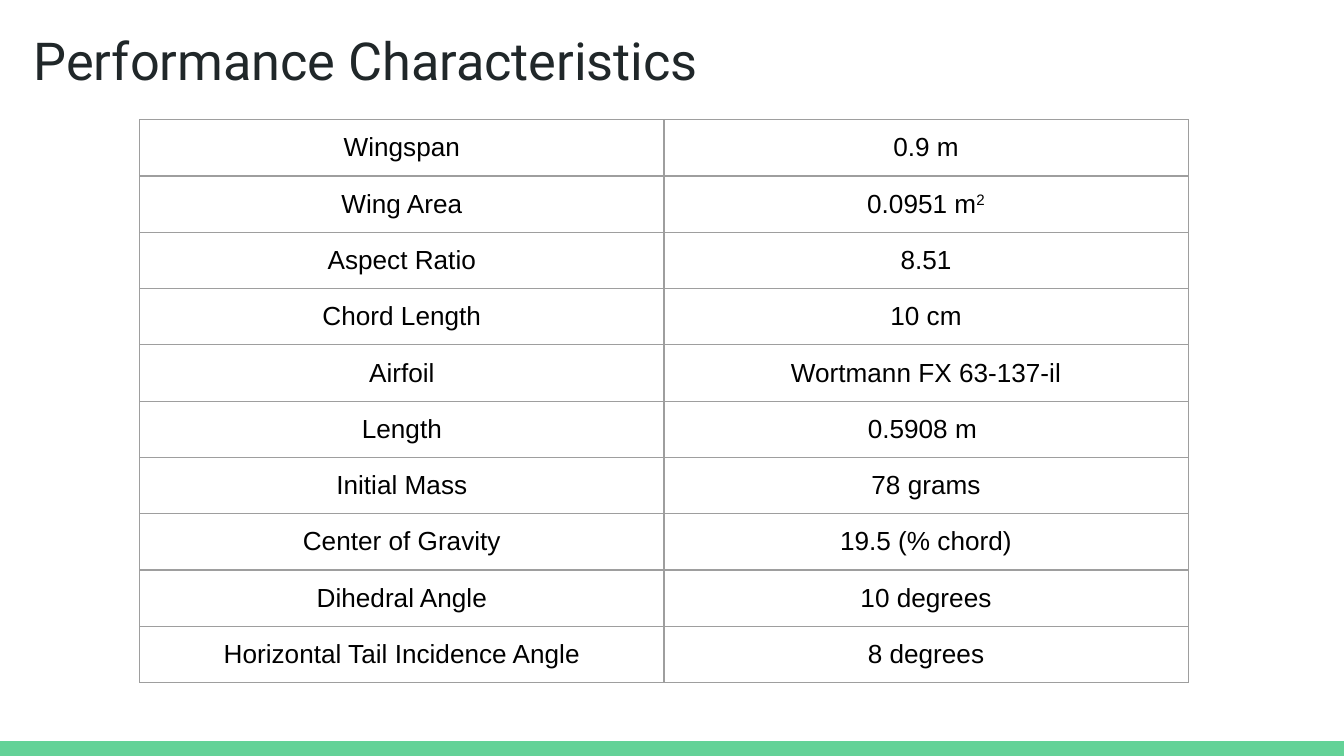
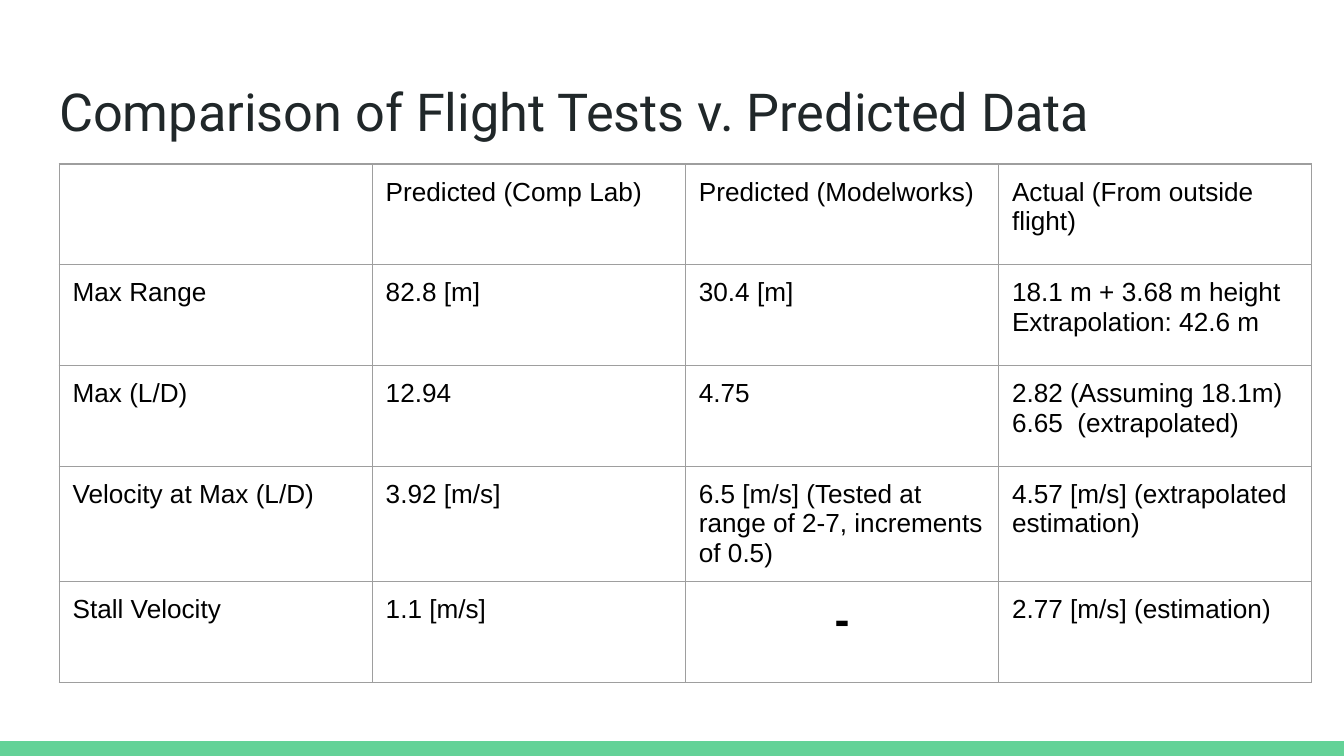
from pptx import Presentation
from pptx.dml.color import RGBColor
from pptx.enum.shapes import MSO_SHAPE
from pptx.enum.text import MSO_ANCHOR, MSO_AUTO_SIZE, PP_ALIGN
from pptx.oxml import parse_xml
from pptx.oxml.ns import nsdecls
from pptx.util import Inches, Pt

GREEN, INK, BLACK, GREY = "63D297", "202729", "000000", "9E9E9E"
INSET = Inches(0.1)


def color(value):
    return RGBColor.from_string(value)


def add_run(p, text, font, size, ink, bold=False):
    r = p.add_run()
    r.text = text
    r.font.name = font
    r.font.size = Pt(size)
    r.font.bold = bold
    r.font.color.rgb = color(ink)
    return r


characteristics = [
    ["Wingspan", "0.9 m"],
    ["Wing Area", "0.0951 m^2"],
    ["Aspect Ratio", "8.51"],
    ["Chord Length", "10 cm"],
    ["Airfoil", "Wortmann FX 63-137-il"],
    ["Length", "0.5908 m "],
    ["Initial Mass", "78 grams"],
    ["Center of Gravity", "19.5 (% chord)"],
    ["Dihedral Angle", "10 degrees"],
    ["Horizontal Tail Incidence Angle", "8 degrees"],
]
comparison = [
    ["", "Predicted (Comp Lab)", "Predicted (Modelworks)", "Actual (From outside flight)"],
    ["Max Range", "82.8 [m]", "30.4 [m]", "18.1 m + 3.68 m height\nExtrapolation: 42.6 m"],
    ["Max (L/D)", "12.94", "4.75", "2.82 (Assuming 18.1m)\n6.65  (extrapolated)"],
    ["Velocity at Max (L/D)", "3.92 [m/s]",
     "6.5 [m/s] (Tested at range of 2-7, increments of 0.5)",
     "4.57 [m/s] (extrapolated estimation)"],
    ["Stall Velocity", "1.1 [m/s]", "-", "2.77 [m/s] (estimation)"],
]
slides = [
    ("Performance Characteristics", (0.15, 0.11), characteristics,
     (1.04, 0.89), 3.9, 0.25, PP_ALIGN.CENTER),
    ("Comparison of Flight Tests v. Predicted Data", (0.34, 0.49), comparison,
     (0.44, 1.22), 2.33, 0.75, PP_ALIGN.LEFT),
]

prs = Presentation()
prs.slide_width = Inches(10)
prs.slide_height = Inches(10) * 9 // 16
layout = prs.slide_layouts[5]

for title, title_at, rows, table_at, col_width, row_height, align in slides:
    s = prs.slides.add_slide(layout)

    sp = s.shapes.title
    sp.left, sp.top = [Inches(v) for v in title_at]
    sp.width, sp.height = Inches(9.32), Inches(0.63)
    tf = sp.text_frame
    tf.margin_left = tf.margin_right = tf.margin_top = tf.margin_bottom = INSET
    tf.vertical_anchor = MSO_ANCHOR.TOP
    tf.auto_size = MSO_AUTO_SIZE.NONE
    tf.word_wrap = True
    p = tf.paragraphs[0]
    p.alignment = PP_ALIGN.LEFT
    add_run(p, title, "Roboto", 28, INK)

    left, top = [Inches(v) for v in table_at]
    table = s.shapes.add_table(
        len(rows), len(rows[0]), left, top,
        Inches(col_width * len(rows[0])), Inches(row_height * len(rows))).table
    table.first_row = False
    table.horz_banding = False
    for col in table.columns:
        col.width = Inches(col_width)
    for i, row in enumerate(rows):
        table.rows[i].height = Inches(row_height)
        for j, text in enumerate(row):
            cell = table.cell(i, j)
            cell.margin_left = cell.margin_right = INSET
            cell.margin_top = cell.margin_bottom = INSET
            tcPr = cell._tc.get_or_add_tcPr()
            for side in ("lnL", "lnR", "lnT", "lnB"):
                tcPr.append(parse_xml(
                    f'<a:{side} {nsdecls("a")} w="{Pt(0.75)}"><a:solidFill>'
                    f'<a:srgbClr val="{GREY}"/></a:solidFill></a:{side}>'))
            cell.fill.background()
            if not text:
                continue
            dash = text == "-"
            tf = cell.text_frame
            for k, line in enumerate(text.split("\n")):
                p = tf.add_paragraph() if k else tf.paragraphs[0]
                p.alignment = PP_ALIGN.CENTER if dash else align
                base, _, power = line.partition("^")
                add_run(p, base, "Arial", 24 if dash else 14, BLACK, dash)
                if power:
                    r = add_run(p, power, "Arial", 14, BLACK)
                    r._r.get_or_add_rPr().set("baseline", "30000")

band_height = Inches(0.11)
band = s.shapes.add_shape(
    MSO_SHAPE.RECTANGLE, 0, prs.slide_height - band_height,
    prs.slide_width, band_height)
band.shadow.inherit = False
band.fill.solid()
band.fill.fore_color.rgb = color(GREEN)
band.line.fill.background()
prs.slide_master.element.cSld.spTree.insert(2, band.element)

prs.save("out.pptx")
